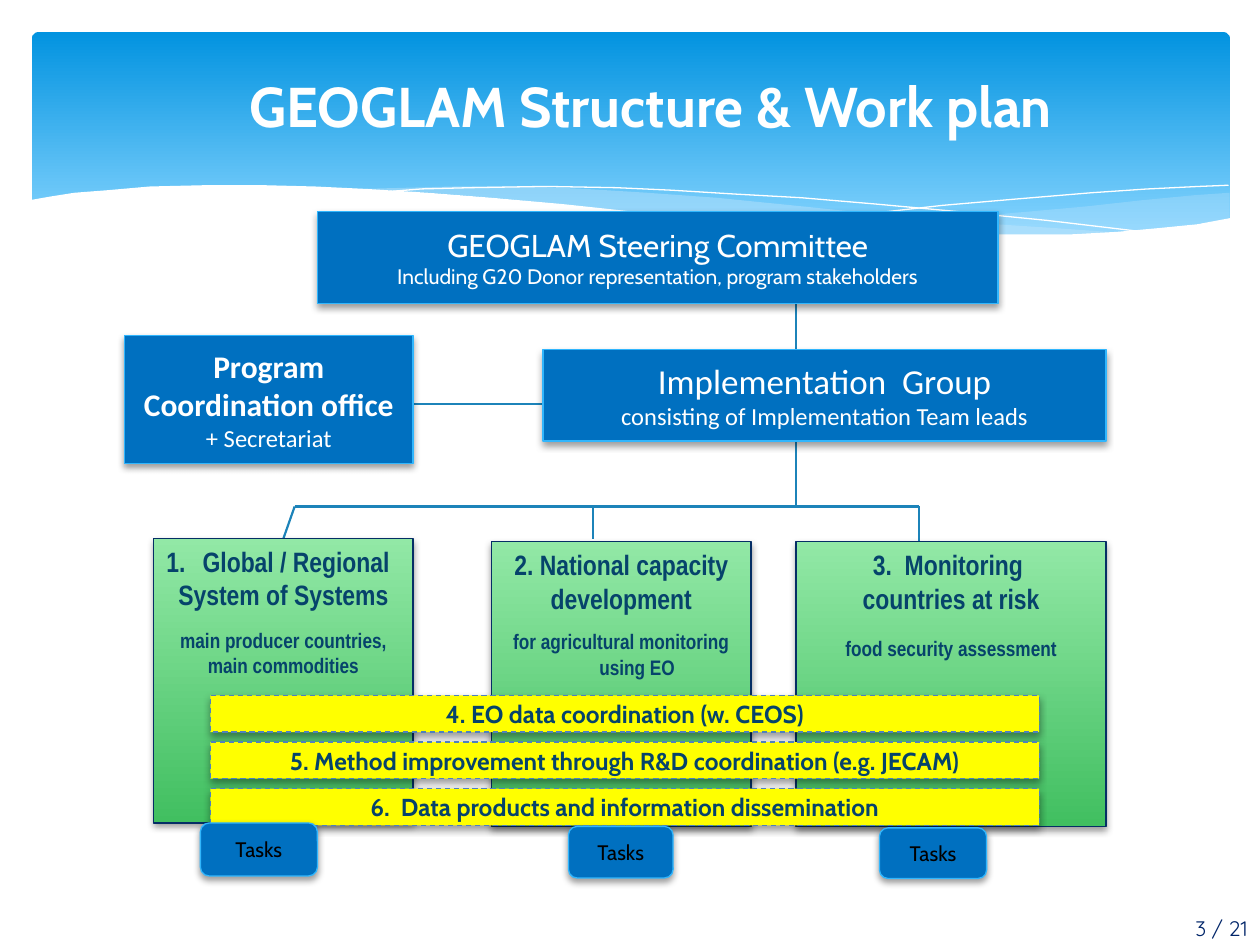
"""Build the GEOGLAM structure and work plan slide."""
from lxml import etree
from pptx import Presentation
from pptx import util as u
from pptx.dml.color import RGBColor
from pptx.enum import shapes, text
from pptx.oxml import ns

HUES = {
    "white": "FFFFFF", "black": "000000", "blue": "0070C0", "edge": "31B6FD",
    "ink": "06436B", "navy": "052E65", "mint": "92E8A6", "green": "41BF60",
    "gold": "FFFF00", "dash": "4F81BD", "link": "1C83B9", "wave": "C6E7FC",
    "sky": "0293E0", "pale": "83D3FE", "page": "002569",
}
HUE = {name: RGBColor.from_string(code) for name, code in HUES.items()}
MID, TOP = text.MSO_ANCHOR.MIDDLE, text.MSO_ANCHOR.TOP
RECT, ROUND = shapes.MSO_SHAPE.RECTANGLE, shapes.MSO_SHAPE.ROUNDED_RECTANGLE


def write(frame, rows, face, hue, align=text.PP_ALIGN.CENTER, anchor=MID):
    frame.word_wrap = True
    frame.vertical_anchor = anchor
    for i, (words, size, bold, gap) in enumerate(rows):
        para = frame.paragraphs[0] if i == 0 else frame.add_paragraph()
        para.text = words
        para.alignment = align
        if gap:
            para.space_before = u.Pt(gap)
        for run in para.runs:
            form = {"name": face, "size": u.Pt(size), "bold": bold}
            for key, val in form.items():
                setattr(run.font, key, val)
            run.font.color.rgb = HUE[hue]


def box(kind, spot, fills, edge, shade=True):
    form = slide.shapes.add_shape(kind, *map(u.Cm, spot))
    if len(fills) == 1:
        form.fill.solid()
        form.fill.fore_color.rgb = HUE[fills[0]]
    else:
        form.fill.gradient()
        form.fill.gradient_angle = 270
        for stop, hue in zip(form.fill.gradient_stops, fills):
            stop.color.rgb = HUE[hue]
    if edge:
        form.line.color.rgb = HUE[edge]
        form.line.width = u.Pt(0.75)
    else:
        form.line.fill.background()
    form.shadow.inherit = False
    if shade:
        glow = etree.SubElement(
            form._element.spPr.find(ns.qn("a:effectLst")), ns.qn("a:outerShdw"),
            blurRad=str(u.Pt(4)), dist=str(u.Pt(2)), dir="5400000", rotWithShape="0")
        tint = etree.SubElement(glow, ns.qn("a:srgbClr"), val=HUES["black"])
        etree.SubElement(tint, ns.qn("a:alpha"), val="38000")
    return form


deck = Presentation()
deck.slide_width, deck.slide_height = u.Cm(25.4), u.Cm(19.05)
slide = deck.slides.add_slide(deck.slide_layouts[5])
title = slide.shapes.title

sky = box(ROUND, (0.64, 0.64, 24.16, 4.45), ("sky", "pale"), None, False)
sky.adjustments[0] = 0.034
sky.fill.gradient_stops[1].position = 0.9

waves = [
    ("wave", 29, [(976, 153), (948, 155), (906, 159), (861, 164), (805, 169),
                  (753, 174), (706, 178), (661, 181), (705, 184), (745, 186),
                  (792, 187), (844, 186), (889, 184), (928, 181), (976, 174)]),
    ("wave", 40, [(893, 185), (837, 181), (775, 177), (706, 171), (629, 163),
                  (569, 157), (514, 153), (465, 150), (420, 148), (361, 148),
                  (286, 150), (342, 153), (404, 158), (449, 163), (530, 171),
                  (601, 177), (665, 182), (722, 185), (785, 187), (848, 187),
                  (893, 185)]),
    (None, 0, [(309, 152), (335, 150), (374, 149), (433, 148), (489, 149),
               (533, 151), (582, 154), (636, 157), (695, 162), (760, 168),
               (831, 175), (907, 184)]),
    (None, 0, [(613, 178), (653, 173), (695, 169), (748, 163), (806, 158),
               (866, 153), (910, 150), (951, 148), (975, 147)]),
    ("white", 100, [(977, 173), (950, 178), (920, 181), (887, 184), (850, 186),
                    (793, 186), (744, 185), (688, 183), (626, 178), (555, 173),
                    (503, 168), (447, 162), (391, 157), (340, 153), (292, 150),
                    (250, 148), (211, 147), (161, 147), (119, 148), (85, 151),
                    (59, 153), (40, 156), (23, 159), (23, 209), (977, 209)]),
]
for hue, alpha, dots in waves:
    path = slide.shapes.build_freeform(*dots[0], scale=u.Cm(0.0254))
    path.add_line_segments(dots[1:], close=bool(hue))
    wave = path.convert_to_shape()
    wave.shadow.inherit = False
    if hue:
        wave.fill.solid()
        wave.fill.fore_color.rgb = HUE[hue]
        wave.line.fill.background()
        tint = wave._element.spPr.find(".//" + ns.qn("a:srgbClr"))
        etree.SubElement(tint, ns.qn("a:alpha"), val=str(alpha * 1000))
    else:
        wave.fill.background()
        wave.line.color.rgb = HUE["white"]
        wave.line.width = u.Pt(0)

slide.shapes._spTree.append(title._element)
spot = {"left": 2.11, "top": 0.81, "width": 22.02, "height": 2.62}
for key, val in spot.items():
    setattr(title, key, u.Cm(val))
write(title.text_frame, [("GEOGLAM Structure & Work plan", 32, True, 0)], "Cabin", "white")

links = []
for ends in [(5.94, 10.21, 5.72, 10.85), (16.05, 10.21, 16.05, 6.12),
             (11.96, 10.21, 11.96, 10.87), (18.52, 10.21, 18.52, 10.9),
             (5.94, 10.21, 18.52, 10.21), (8.28, 8.15, 11, 8.15)]:
    link = slide.shapes.add_connector(shapes.MSO_CONNECTOR.STRAIGHT, *map(u.Cm, ends))
    link.line.color.rgb = HUE["link"]
    link.line.width = u.Pt(1.25)
    etree.SubElement(link._element.spPr, ns.qn("a:effectLst"))
    links.append(link)

for spot, face, rows in [
    ((6.4, 4.27, 13.72, 1.85), "Cabin",
     [("GEOGLAM Steering Committee", 18, False, 0),
      ("Including G20 Donor representation, program stakeholders", 12, False, 0)]),
    ((10.95, 7.04, 11.35, 1.85), "Calibri",
     [("Implementation  Group", 20, False, 0),
      ("consisting of Implementation Team leads", 14, False, 0)]),
    ((2.51, 6.76, 5.82, 2.59), "Calibri",
     [("Program Coordination office", 18, True, 0), ("+ Secretariat", 14, False, 0)]),
]:
    write(box(RECT, spot, ["blue"], "edge").text_frame, rows, face, "white")

teams = []
for left, top, width, head, note, gap in [
    (3.1, 10.85, 5.23, " Global / Regional System of Systems",
     "main producer countries, main commodities", 9),
    (9.91, 10.92, 5.23, "2. National capacity development",
     "for agricultural monitoring using EO", 8),
    (16.05, 10.92, 6.25, "3.  Monitoring \vcountries at risk",
     "food security assessment", 12),
]:
    team = box(RECT, (left, top, width, 5.74), ("mint", "green"), "navy")
    rows = [(head, 16, True, 0), (note, 12, True, gap)]
    write(team.text_frame, rows, "Arial Narrow", "ink", anchor=TOP)
    teams.append(team)
links[0].end_connect(teams[0], 0)
first = teams[0].text_frame.paragraphs[0]._p.get_or_add_pPr()
etree.SubElement(first, ns.qn("a:buAutoNum"), type="arabicPeriod")
hang = teams[1].text_frame.paragraphs[1]._p.get_or_add_pPr()
for key, val in {"marL": 0.64, "indent": -0.64}.items():
    hang.set(key, str(u.Cm(val)))

for i, words in enumerate([
    "4. EO data coordination (w. CEOS)",
    "5. Method improvement through R&D coordination (e.g. JECAM)",
    "6.  Data products and information dissemination",
]):
    band = box(RECT, (4.24, 14.02 + 0.94 * i, 16.71, 0.74), ["gold"], "dash")
    band.line.dash_style = 4
    write(band.text_frame, [(words, 14, True, 0)], "Cabin", "ink")

for spot in [(4.04, 16.59, 2.36, 1.07), (11.46, 16.66, 2.11, 1.04), (17.73, 16.69, 2.16, 1.02)]:
    task = box(ROUND, spot, ["blue"], "edge")
    write(task.text_frame, [("Tasks", 12, False, 0)], "Cabin", "black")

page = slide.shapes.add_textbox(*map(u.Cm, (20.12, 18.34, 5.28, 0.71)))
write(page.text_frame, [("3 / 21", 12, False, 0)], "Quicksand", "page",
      text.PP_ALIGN.RIGHT, TOP)

deck.save("out.pptx")
